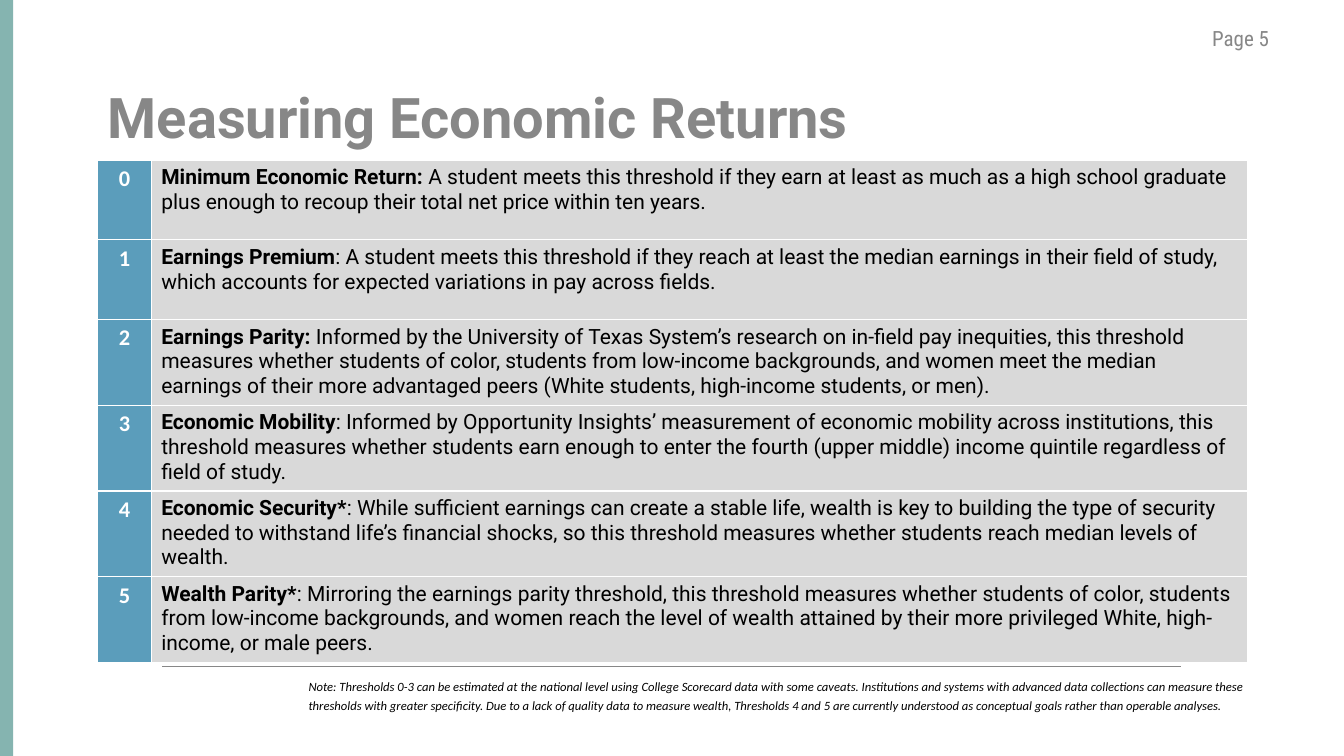
from lxml import etree
from pptx import Presentation
from pptx.dml.color import RGBColor
from pptx.enum.shapes import MSO_CONNECTOR, MSO_SHAPE
from pptx.enum.text import MSO_ANCHOR, PP_ALIGN
from pptx.oxml.ns import qn
from pptx.util import Inches, Pt

CENTER, LEFT = PP_ALIGN.CENTER, PP_ALIGN.LEFT
MIDDLE = MSO_ANCHOR.MIDDLE
GRAY, TEAL, BLUE, PALE = "878787", "85B4B0", "3385AA", "D9D9D9"
WHITE, BLACK = "FFFFFF", "000000"

TITLE = "Measuring Economic Returns"
PAGE = "Page 5"
THRESHOLDS = [
    ("Minimum Economic Return: ",
     "A student meets this threshold if they earn at least as much as a high school graduate "
     "plus enough to recoup their total net price within ten years."),
    ("Earnings Premium",
     ": A student meets this threshold if they reach at least the median earnings in their "
     "field of study, which accounts for expected variations in pay across fields."),
    ("Earnings Parity: ",
     "Informed by the University of Texas System’s research on in-field pay inequities, this "
     "threshold measures whether students of color, students from low-income backgrounds, and "
     "women meet the median earnings of their more advantaged peers (White students, "
     "high-income students, or men)."),
    ("Economic Mobility",
     ": Informed by Opportunity Insights’ measurement of economic mobility across institutions, "
     "this threshold measures whether students earn enough to enter the fourth (upper middle) "
     "income quintile regardless of field of study."),
    ("Economic Security*",
     ": While sufficient earnings can create a stable life, wealth is key to building the type "
     "of security needed to withstand life’s financial shocks, so this threshold measures "
     "whether students reach median levels of wealth."),
    ("Wealth Parity*",
     ": Mirroring the earnings parity threshold, this threshold measures whether students of "
     "color, students from low-income backgrounds, and women reach the level of wealth attained "
     "by their more privileged White, high-income, or male peers."),
]
NOTE = ("Note: Thresholds 0-3 can be estimated at the national level using College Scorecard data "
        "with some caveats. Institutions and systems with advanced data collections can measure "
        "these thresholds with greater specificity. Due to a lack of quality data to measure "
        "wealth, Thresholds 4 and 5 are currently understood as conceptual goals rather than "
        "operable analyses.")

TABLE_LEFT, TABLE_TOP = 0.97, 1.59
COL_WIDTHS = (0.53, 10.87)
ROW_HEIGHT = 0.79


def rgb(color):
    return RGBColor.from_string(color)


def box(*at):
    return [Inches(v) for v in at]


def write(tf, text, size=15, font="Roboto", color=BLACK, bold=False, italic=False,
          align=LEFT, spacing=None):
    """Add a run to the first paragraph of a text frame."""
    p = tf.paragraphs[0]
    p.alignment = align
    if spacing:
        p.line_spacing = spacing
    r = p.add_run()
    r.text = text
    r.font.size, r.font.name = Pt(size), font
    r.font.bold, r.font.italic = bold, italic
    r.font.color.rgb = rgb(color)


def add_textbox(s, at, text, margin=None, **fmt):
    tf = s.shapes.add_textbox(*box(*at)).text_frame
    tf.word_wrap = True
    if margin is not None:
        tf.margin_left = tf.margin_right = tf.margin_top = tf.margin_bottom = Inches(margin)
    write(tf, text, **fmt)


def style_cell(cell, color, sides, alpha=None):
    """Fill a cell and give it white borders on the given sides."""
    tcPr = cell._tc.get_or_add_tcPr()
    for side in sides:
        ln = etree.SubElement(tcPr, qn(f"a:ln{side}"), w=str(Pt(1)))
        fill = etree.SubElement(ln, qn("a:solidFill"))
        etree.SubElement(fill, qn("a:srgbClr"), val=WHITE)
    cell.fill.solid()
    cell.fill.fore_color.rgb = rgb(color)
    if alpha:
        clr = tcPr.find(qn("a:solidFill")).find(qn("a:srgbClr"))
        etree.SubElement(clr, qn("a:alpha"), val=str(alpha * 1000))


def add_threshold_table(s):
    count = len(THRESHOLDS)
    table = s.shapes.add_table(count, 2, *box(TABLE_LEFT, TABLE_TOP, sum(COL_WIDTHS),
                                              count * ROW_HEIGHT)).table
    table.first_row = table.horz_banding = False
    for col, width in zip(table.columns, COL_WIDTHS):
        col.width = Inches(width)
    for i, (name, meaning) in enumerate(THRESHOLDS):
        table.rows[i].height = Inches(ROW_HEIGHT)
        number, text = table.cell(i, 0), table.cell(i, 1)
        style_cell(number, BLUE, "LTB", alpha=80)
        write(number.text_frame, str(i), size=16, font="Calibri", color=WHITE, bold=True,
              align=CENTER)
        style_cell(text, PALE, "RTB")
        write(text.text_frame, name, bold=True)
        write(text.text_frame, meaning)


def main():
    prs = Presentation()
    prs.slide_width, prs.slide_height = Inches(13.33), Inches(7.5)
    s = prs.slides.add_slide(prs.slide_layouts[5])

    title = s.shapes.title
    title.left, title.top, title.width, title.height = box(0.97, 0.72, 11.39, 0.87)
    title.text_frame.vertical_anchor = MIDDLE
    write(title.text_frame, TITLE, size=40, color=GRAY, bold=True)

    band = s.shapes.add_shape(MSO_SHAPE.RECTANGLE, *box(0, 0, 0.13, 7.5))
    band.shadow.inherit = False
    band.fill.solid()
    band.fill.fore_color.rgb = rgb(TEAL)
    band.line.fill.background()

    rule = s.shapes.add_connector(MSO_CONNECTOR.STRAIGHT, *box(1.61, 6.61, 11.71, 6.61))
    rule.line.color.rgb = rgb(GRAY)
    rule.line.width = Pt(0.5)
    etree.SubElement(rule._element.spPr, qn("a:effectLst"))

    add_textbox(s, (11.68, 0.2, 1.25, 0.4), PAGE, font="Roboto Condensed", color=GRAY,
                align=CENTER)
    add_threshold_table(s)
    add_textbox(s, (3.06, 6.71, 9.62, 0.35), NOTE, margin=0, size=9, font="Calibri",
                italic=True, spacing=1.2)
    prs.save("out.pptx")


if __name__ == "__main__":
    main()
